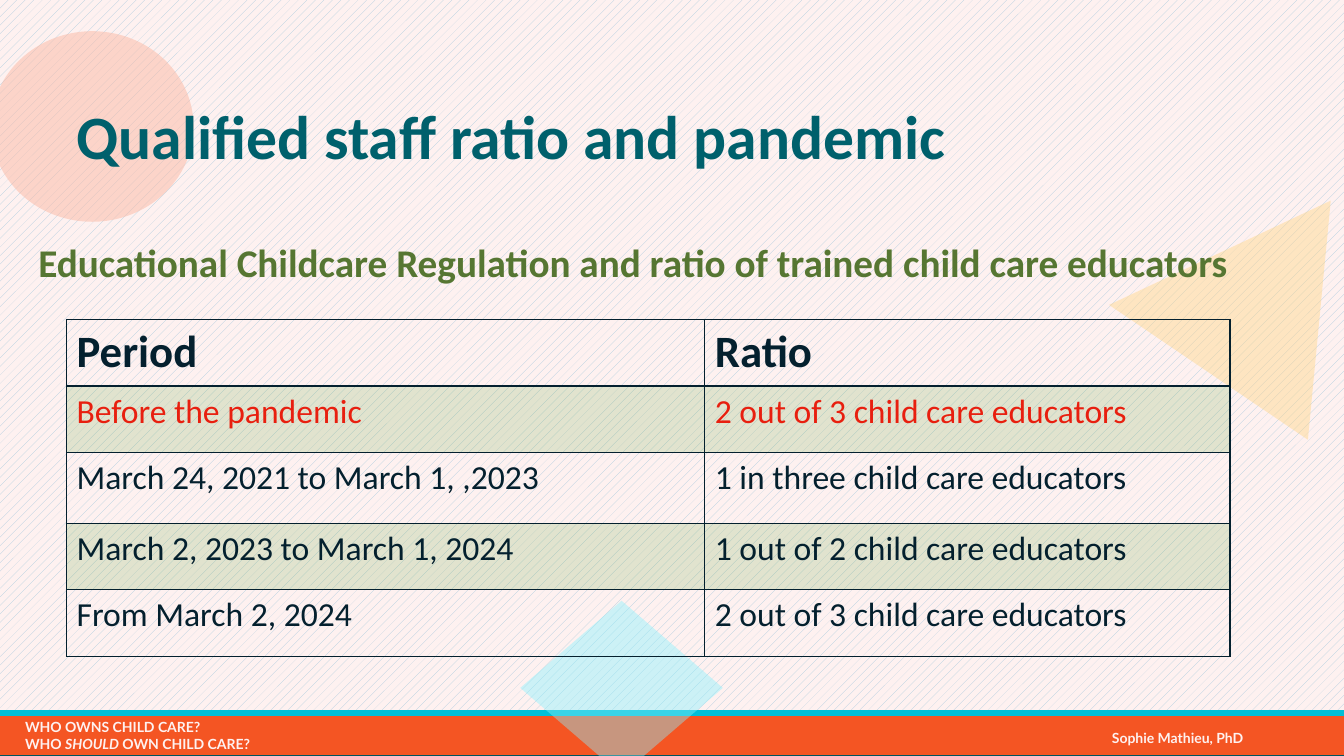
from copy import deepcopy
from dataclasses import dataclass

from lxml import etree
from pptx import Presentation
from pptx.dml.color import RGBColor
from pptx.enum.dml import MSO_PATTERN
from pptx.enum.shapes import MSO_SHAPE as SHAPE
from pptx.enum.text import MSO_ANCHOR as ANCHOR, MSO_AUTO_SIZE as AUTO_SIZE
from pptx.oxml.ns import qn
from pptx.util import Emu, Pt

PX = 9144  # 100 px to the inch
INK, PALE, TEAL, RED = "04202E", "FEF1F0", "00606C", "E81F0F"
OLIVE, BAND, ORANGE, CYAN = "567632", "70AD47", "F45523", "00BFD7"


@dataclass
class Box:
    x: int
    y: int
    w: int
    h: int

    def emu(self) -> list[Emu]:
        return [px(v) for v in (self.x, self.y, self.w, self.h)]


@dataclass
class Decor:
    kind: SHAPE
    box: Box
    fill: str
    alpha: int = 100
    line: str | None = None
    rotation: float = 0


@dataclass
class Label:
    box: Box
    runs: list[tuple[str, bool]]  # text, italic
    size: int
    font: str
    color: str
    spacing: float | None = None
    anchor: ANCHOR = ANCHOR.TOP
    grow: bool = False
    side_inset: int = 10
    indent: int = 0


@dataclass
class Row:
    period: str
    ratio: str
    height: int = 66
    size: int = 24
    color: str = INK
    bold: bool = False
    banded: bool = False


def px(n: int) -> Emu:
    return Emu(n * PX)


def rgb(value: str) -> RGBColor:
    return RGBColor.from_string(value)


def set_fill(fill, color: str, alpha: int = 100) -> None:
    fill.solid()
    fill.fore_color.rgb = rgb(color)
    if alpha < 100:
        clr = fill._xPr.find(qn("a:solidFill")).find(qn("a:srgbClr"))
        etree.SubElement(clr, qn("a:alpha"), val=str(alpha * 1000))


def style_font(font, size: int, name: str, color: str, bold: bool) -> None:
    font.size, font.name, font.bold = Pt(size), name, bold
    font.color.rgb = rgb(color)


def draw_decor(slide, d: Decor) -> None:
    s = slide.shapes.add_shape(d.kind, *d.box.emu())
    s.shadow.inherit = False
    s.rotation = d.rotation
    set_fill(s.fill, d.fill, d.alpha)
    if d.line:
        s.line.color.rgb = rgb(d.line)
        s.line.width = Pt(1)
    else:
        s.line.fill.background()


def draw_label(slide, label: Label) -> None:
    tf = slide.shapes.add_textbox(*label.box.emu()).text_frame
    tf.word_wrap = True
    tf.auto_size = AUTO_SIZE.SHAPE_TO_FIT_TEXT if label.grow else AUTO_SIZE.NONE
    tf.vertical_anchor = label.anchor
    tf.margin_left = tf.margin_right = px(label.side_inset)
    p = tf.paragraphs[0]
    p.line_spacing = label.spacing
    if label.indent:
        ppr = p._p.get_or_add_pPr()
        ppr.set("marL", str(px(label.indent)))
        ppr.set("indent", "0")
    p.text = label.runs[0][0]
    for text, italic in label.runs[1:]:
        r = p.add_run()
        r.text = text
        r.font.italic = italic
    for r in p.runs:
        style_font(r.font, label.size, label.font, label.color, True)
    # Line breaks take the text size of the runs
    for br in p._p.findall(qn("a:br")):
        br.append(deepcopy(p.runs[0]._r.rPr))


def set_borders(cell, widths: dict[str, float]) -> None:
    tcpr = cell._tc.get_or_add_tcPr()
    for i, (side, width) in enumerate(widths.items()):
        ln = etree.Element(qn(f"a:{side}"), w=str(Pt(width)))
        fill = etree.SubElement(ln, qn("a:solidFill"))
        etree.SubElement(fill, qn("a:srgbClr"), val=INK)
        tcpr.insert(i, ln)


def draw_table(slide, box: Box, widths: list[int], rows: list[Row]) -> None:
    table = slide.shapes.add_table(len(rows), len(widths), *box.emu()).table
    table.first_row = table.horz_banding = False
    for column, width in zip(table.columns, widths):
        column.width = px(width)
    for i, row in enumerate(rows):
        table.rows[i].height = px(row.height)
        for j, text in enumerate((row.period, row.ratio)):
            cell = table.cell(i, j)
            cell.text = text
            style_font(cell.text_frame.paragraphs[0].runs[0].font,
                       row.size, "Calibri", row.color, row.bold)
            if row.banded:
                set_fill(cell.fill, BAND, 20)
            else:
                cell.fill.background()
            # The rule under the header is heavier
            set_borders(cell, {"lnL": 1, "lnR": 1,
                               "lnT": 1.5 if i == 1 else 1,
                               "lnB": 1.5 if i == 0 else 1})


DECOR = [
    Decor(SHAPE.RECTANGLE, Box(-9, 710, 1368, 40), ORANGE, line="00545E"),
    Decor(SHAPE.RECTANGLE, Box(-9, 705, 1368, 5), CYAN, line=CYAN),
    Decor(SHAPE.DIAMOND, Box(516, 596, 201, 173), "89F2FF", 42),
    Decor(SHAPE.ISOSCELES_TRIANGLE, Box(1132, 241, 243, 205), "FED78B", 46,
          rotation=154.8),
    Decor(SHAPE.OVAL, Box(-9, 31, 201, 189), "FBBBA7", 53),
]
FOOTERS = [
    Label(Box(15, 708, 265, 44),
          [("WHO OWNS CHILD CARE?\vWHO ", False), ("SHOULD", True),
           (" OWN CHILD CARE?", False)], 10, "Lato", PALE, grow=True),
    Label(Box(1093, 719, 265, 27), [("Sophie Mathieu, PhD", False)],
          10, "Lato", PALE, grow=True),
]
TITLE = Label(Box(66, 87, 1100, 102),
              [("Qualified staff ratio and pandemic", False)],
              44, "Calibri", TEAL, spacing=0.9, anchor=ANCHOR.MIDDLE)
SUBTITLE = Label(
    Box(-57, 237, 1286, 33),
    [("Educational Childcare Regulation and ratio of trained child care educators",
      False)],
    28, "Calibri", OLIVE, spacing=0.9, side_inset=0, indent=95)
ROWS = [
    Row("Period", "Ratio", size=32, bold=True),
    Row("Before the pandemic", "2 out of 3 child care educators",
        color=RED, banded=True),
    Row("March 24, 2021 to March 1, ,2023", "1 in three child care educators",
        height=70),
    Row("March 2, 2023 to March 1, 2024", "1 out of 2 child care educators",
        banded=True),
    Row("From March 2, 2024", "2 out of 3 child care educators"),
]


def main() -> None:
    prs = Presentation()
    prs.slide_width, prs.slide_height = px(1333), px(750)
    slide = prs.slides.add_slide(prs.slide_layouts[6])

    # Hatched background
    bg = slide.background.fill
    bg.patterned()
    bg.pattern = MSO_PATTERN.PERCENT_20
    bg.fore_color.rgb, bg.back_color.rgb = rgb("AACBDE"), rgb(PALE)

    # Footer band, with its text below the loose shapes
    for d in DECOR[:2]:
        draw_decor(slide, d)
    for label in FOOTERS:
        draw_label(slide, label)
    for d in DECOR[2:]:
        draw_decor(slide, d)

    # Content
    draw_label(slide, TITLE)
    draw_table(slide, Box(66, 317, 1154, 334), [633, 521], ROWS)
    draw_label(slide, SUBTITLE)
    prs.save("out.pptx")


if __name__ == "__main__":
    main()
